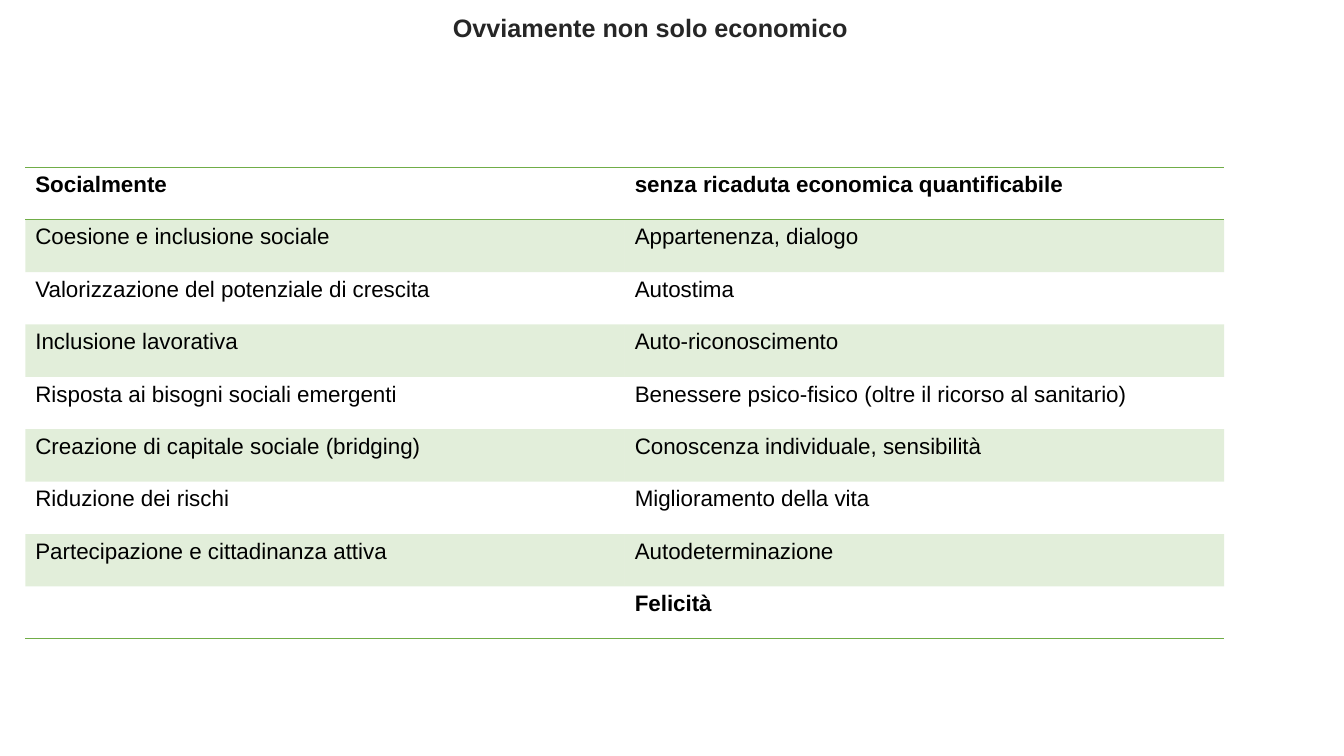
import pptx
import pptx.dml.color
import pptx.enum.text
import pptx.oxml
import pptx.oxml.ns
import pptx.util

RGB = pptx.dml.color.RGBColor
GREEN = RGB(0x70, 0xAD, 0x47)
DARK = RGB(0x26, 0x26, 0x26)
BLACK = RGB(0x00, 0x00, 0x00)
WIDTH, HEIGHT = pptx.util.Inches(13.33), pptx.util.Inches(7.5)
PLAIN_STYLE = "{2D5ABB26-0587-4C30-8999-92F81FD0307C}"
TITLE_FONT = {"name": "Arial", "size": pptx.util.Pt(18), "bold": True}
CELL_FONT = {"name": "Arial", "size": pptx.util.Pt(16)}

ROWS = [
    ("Socialmente", "senza ricaduta economica quantificabile"),
    ("Coesione e inclusione sociale", "Appartenenza, dialogo"),
    ("Valorizzazione del potenziale di crescita", "Autostima"),
    ("Inclusione lavorativa", "Auto-riconoscimento"),
    ("Risposta ai bisogni sociali emergenti",
     "Benessere psico-fisico (oltre il ricorso al sanitario)"),
    ("Creazione di capitale sociale (bridging)", "Conoscenza individuale, sensibilità"),
    ("Riduzione dei rischi", "Miglioramento della vita"),
    ("Partecipazione e cittadinanza attiva", "Autodeterminazione"),
    ("", "Felicità"),
]


def box(left, top, width, height):
    """Turn percentages of the slide into lengths."""
    return [int(share * side / 100) for share, side in
            zip((left, top, width, height), (WIDTH, HEIGHT) * 2)]


def format_font(font, values, color):
    """Set the font attributes and colour."""
    for name, value in values.items():
        setattr(font, name, value)
    font.color.rgb = color


def add_borders(cell, sides):
    """Draw one-point green lines on the given sides, in schema order."""
    tcPr = cell._tc.get_or_add_tcPr()
    for i, side in enumerate(sides):
        tcPr.insert(i, pptx.oxml.parse_xml(
            f'<a:{side} {pptx.oxml.ns.nsdecls("a")} w="12700"><a:solidFill>'
            f'<a:srgbClr val="{GREEN}"/></a:solidFill></a:{side}>'))


def tint(cell):
    """Fill the cell with green at 20% opacity."""
    cell.fill.solid()
    cell.fill.fore_color.rgb = GREEN
    color = cell._tc.tcPr.find(".//" + pptx.oxml.ns.qn("a:srgbClr"))
    color.append(pptx.oxml.parse_xml(
        f'<a:alpha {pptx.oxml.ns.nsdecls("a")} val="20000"/>'))


def add_title(s, text, area):
    """Place the centred title in its area."""
    sp = s.shapes.title
    sp.left, sp.top, sp.width, sp.height = area
    tf = sp.text_frame
    tf.text = text
    tf.word_wrap = True
    tf.vertical_anchor = pptx.enum.text.MSO_ANCHOR.TOP
    p = tf.paragraphs[0]
    p.alignment = pptx.enum.text.PP_ALIGN.CENTER
    p.line_spacing = 0.8
    format_font(p.runs[0].font, TITLE_FONT, DARK)


def add_benefits(s, rows, area):
    """Place the two-column table with tinted alternate rows."""
    table = s.shapes.add_table(len(rows), len(rows[0]), *area).table
    table._tbl.tblPr.find(pptx.oxml.ns.qn("a:tableStyleId")).text = PLAIN_STYLE
    last = len(rows) - 1
    for i, texts in enumerate(rows):
        for j, text in enumerate(texts):
            cell = table.cell(i, j)
            cell.text = text
            p = cell.text_frame.paragraphs[0]
            format_font(p.font, {**CELL_FONT, "bold": i in (0, last)}, BLACK)
            for r in p.runs:
                format_font(r.font, {**CELL_FONT, "bold": i in (0, last)}, BLACK)
            if i % 2:
                tint(cell)
            else:
                cell.fill.background()
            if i == 0:
                add_borders(cell, ("lnT", "lnB"))
            elif i == last:
                add_borders(cell, ("lnB",))


def main():
    """Build and save the slide."""
    prs = pptx.Presentation()
    prs.slide_width, prs.slide_height = WIDTH, HEIGHT
    s = prs.slides.add_slide(prs.slide_layouts[5])
    add_title(s, "Ovviamente non solo economico", box(1.05, 1.73, 94.67, 6.67))
    add_benefits(s, ROWS, box(1.88, 22.13, 89.2, 62.4))
    prs.save("out.pptx")


if __name__ == "__main__":
    main()
